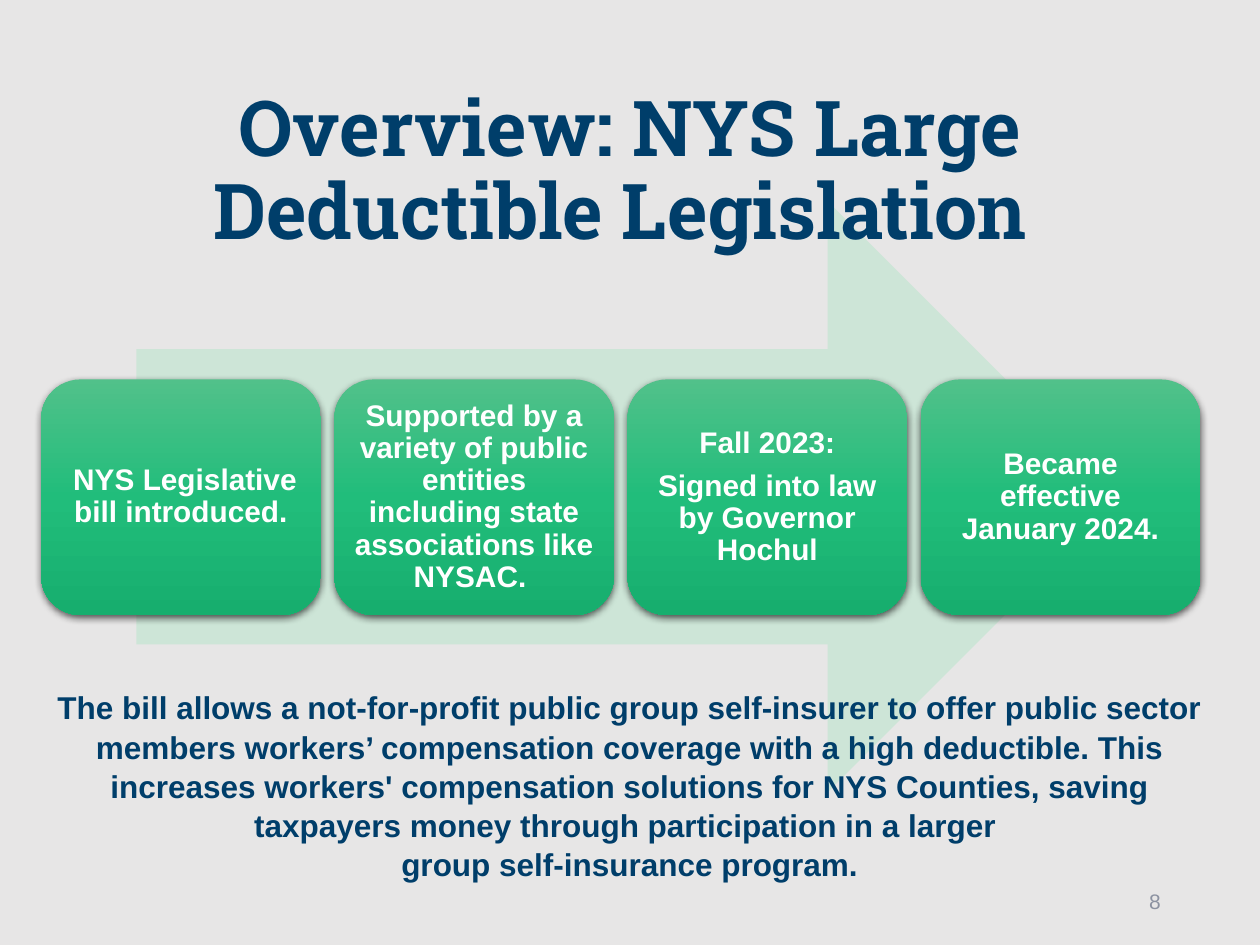
import dataclasses

import lxml.etree
import pptx
import pptx.dml.color
import pptx.enum.shapes
import pptx.enum.text
import pptx.oxml
import pptx.oxml.ns
import pptx.util

Cm = pptx.util.Cm
Align = pptx.enum.text.PP_ALIGN
Anchor = pptx.enum.text.MSO_ANCHOR
Shape = pptx.enum.shapes.MSO_SHAPE
NAMESPACE = pptx.oxml.ns.nsdecls("a")


@dataclasses.dataclass(frozen=True)
class Theme:
    background: str = "E7E6E6"
    navy: str = "003E6A"
    white: str = "FFFFFF"
    grey: str = "8C92A1"
    arrow: str = "CDE5D7"
    card_stops: tuple = ((0, "51C18A"), (50, "21BD7B"), (100, "17AE6E"))
    heading_font: str = "Roboto Slab"
    body_font: str = "Arial"
    title_size: int = 44
    body_size: int = 18
    card_size: int = 17
    number_size: int = 12


def rgb(value):
    return pptx.dml.color.RGBColor.from_string(value)


def write_text(shape, text, *, font, size, color, bold=True, align=Align.CENTER,
               anchor=Anchor.TOP, line_spacing=None, space_after=0, inset=None):
    """Fill a shape with text, one paragraph per line of the string."""
    frame = shape.text_frame
    frame.word_wrap = True
    frame.auto_size = pptx.enum.text.MSO_AUTO_SIZE.NONE
    frame.vertical_anchor = anchor
    if inset is not None:
        frame.margin_left = frame.margin_right = Cm(inset)
        frame.margin_top = frame.margin_bottom = Cm(inset)
    for index, line in enumerate(text.split("\n")):
        para = frame.add_paragraph() if index else frame.paragraphs[0]
        para.alignment = align
        para.space_before = pptx.util.Pt(0)
        para.space_after = pptx.util.Pt(space_after)
        if line_spacing:
            para.line_spacing = line_spacing
        span = para.add_run()
        span.text = line
        span.font.name = font
        span.font.size = pptx.util.Pt(size)
        span.font.bold = bold
        span.font.color.rgb = rgb(color)


class PageBuilder:
    def __init__(self, page, theme):
        self.page = page
        self.theme = theme
        fill = page.background.fill
        fill.solid()
        fill.fore_color.rgb = rgb(theme.background)

    def shape(self, kind, left, top, width, height):
        shape = self.page.shapes.add_shape(
            kind, Cm(left), Cm(top), Cm(width), Cm(height))
        shape.shadow.inherit = False
        shape.line.fill.background()
        return shape

    def arrow(self, left, top, width, height):
        arrow = self.shape(Shape.RIGHT_ARROW, left, top, width, height)
        arrow.fill.solid()
        arrow.fill.fore_color.rgb = rgb(self.theme.arrow)

    def card(self, text, left, top, width, height):
        card = self.shape(Shape.ROUNDED_RECTANGLE, left, top, width, height)
        # Three-stop gradient, top to bottom
        stops = "".join(
            f'<a:gs pos="{place * 1000}"><a:srgbClr val="{color}"/></a:gs>'
            for place, color in self.theme.card_stops)
        properties = card.element.spPr
        properties.find(pptx.oxml.ns.qn("a:prstGeom")).addnext(pptx.oxml.parse_xml(
            f'<a:gradFill {NAMESPACE} rotWithShape="1"><a:gsLst>{stops}</a:gsLst>'
            '<a:lin ang="5400000" scaled="0"/></a:gradFill>'))
        # Soft shadow below the card
        properties.find(pptx.oxml.ns.qn("a:effectLst")).append(pptx.oxml.parse_xml(
            f'<a:outerShdw {NAMESPACE} blurRad="57150" dist="19050" dir="5400000" '
            'algn="ctr" rotWithShape="0"><a:srgbClr val="000000">'
            '<a:alpha val="63000"/></a:srgbClr></a:outerShdw>'))
        write_text(card, text, font=self.theme.body_font, size=self.theme.card_size,
                   color=self.theme.white, anchor=Anchor.MIDDLE,
                   line_spacing=0.9, space_after=6, inset=0.18)

    def text(self, text, left, top, width, height, **style):
        box = self.page.shapes.add_textbox(
            Cm(left), Cm(top), Cm(width), Cm(height))
        write_text(box, text, font=self.theme.body_font, **style)

    def title(self, text, left, top, width, height):
        title = self.page.shapes.title
        title.left, title.top = Cm(left), Cm(top)
        title.width, title.height = Cm(width), Cm(height)
        write_text(title, text, font=self.theme.heading_font,
                   size=self.theme.title_size, color=self.theme.navy,
                   anchor=Anchor.MIDDLE, line_spacing=0.9)
        # The title lies in front of the arrow
        self.page.shapes.element.append(title.element)


def main():
    theme = Theme()
    deck = pptx.Presentation()
    deck.slide_width, deck.slide_height = Cm(25.4), Cm(19.05)
    builder = PageBuilder(deck.slides.add_slide(deck.slide_layouts[5]), theme)

    # Page number
    builder.text("8", 17.93, 17.65, 5.72, 1.02, size=theme.number_size,
                 color=theme.grey, bold=False, align=Align.RIGHT,
                 anchor=Anchor.MIDDLE)

    # Timeline: four steps on an arrow
    builder.arrow(2.75, 4.06, 19.89, 11.91)
    steps = (
        " NYS Legislative bill introduced.",
        "Supported by a variety of public entities including state "
        "associations like NYSAC. ",
        "Fall 2023:\nSigned into law by Governor Hochul",
        "Became effective January 2024.",
    )
    first_left, step_pitch = 0.83, 5.91
    for index, step in enumerate(steps):
        builder.card(step, first_left + index * step_pitch, 7.65, 5.64, 4.75)

    # Summary of the bill
    builder.text(
        "The bill allows a not-for-profit public group self-insurer to offer "
        "public sector members workers’ compensation coverage with a high "
        "deductible. This increases workers' compensation solutions for NYS "
        "Counties, saving taxpayers money through participation in a larger \n"
        "group self-insurance program.",
        0.81, 13.72, 23.77, 4.11, size=theme.body_size, color=theme.navy,
        line_spacing=1.04)

    # Title
    builder.title("Overview: NYS Large Deductible Legislation ",
                  1.75, 1.65, 21.9, 3.68)

    deck.save("out.pptx")


if __name__ == "__main__":
    main()
